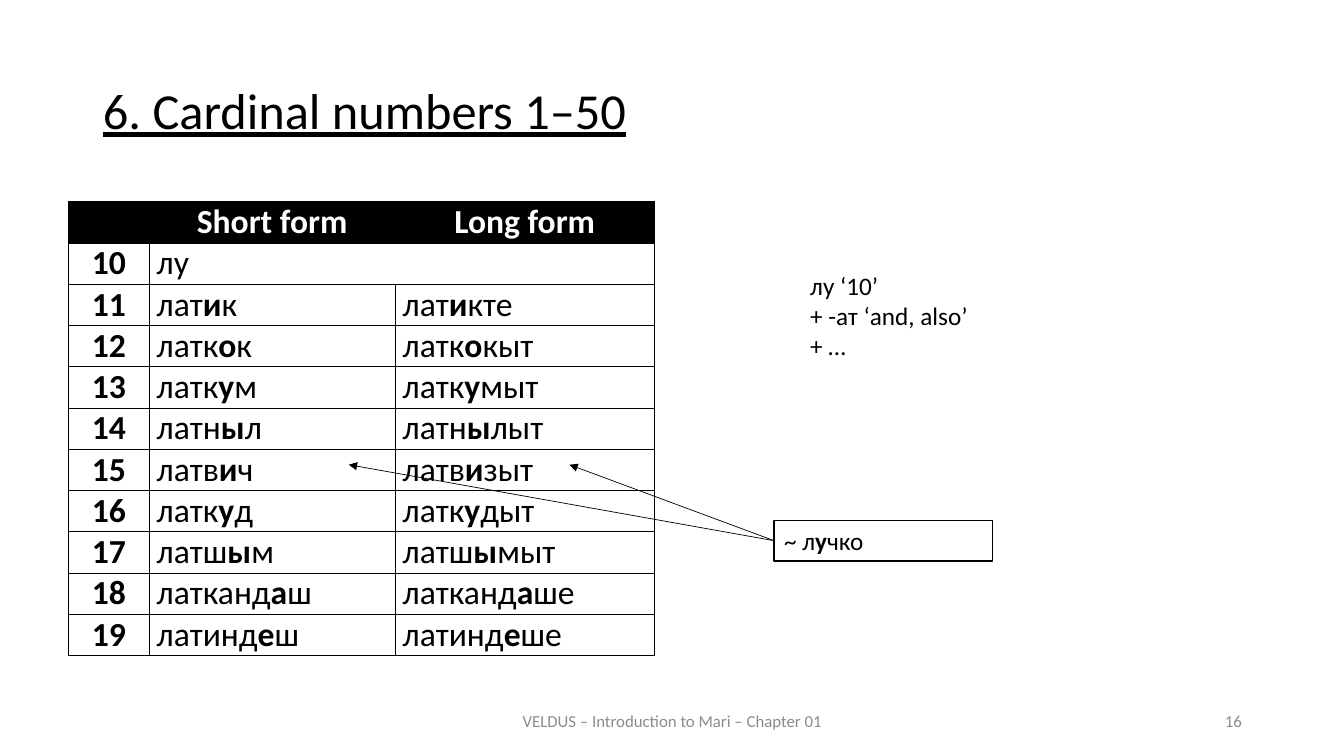
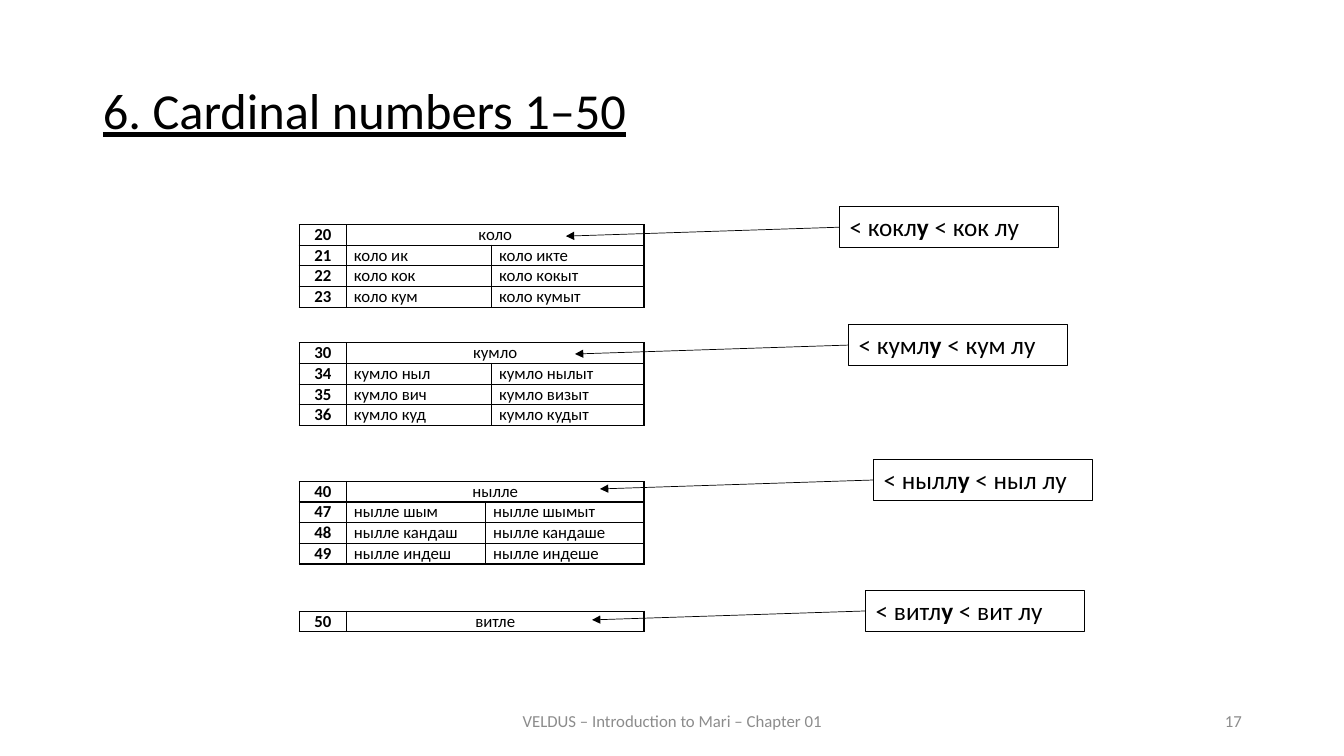
"""Build two slides on the Mari cardinal numbers from 10 to 50."""
from dataclasses import dataclass

from lxml import etree
from pptx import Presentation
from pptx.dml.color import RGBColor
from pptx.enum.shapes import MSO_CONNECTOR, MSO_SHAPE
from pptx.enum.text import MSO_ANCHOR, MSO_AUTO_SIZE, PP_ALIGN
from pptx.oxml.ns import qn
from pptx.util import Cm, Pt

LEFT, CENTER, RIGHT, JUSTIFY = PP_ALIGN.LEFT, PP_ALIGN.CENTER, PP_ALIGN.RIGHT, PP_ALIGN.JUSTIFY
TOP, MIDDLE = MSO_ANCHOR.TOP, MSO_ANCHOR.MIDDLE
NO_FIT = MSO_AUTO_SIZE.NONE
STRAIGHT = MSO_CONNECTOR.STRAIGHT
RECTANGLE = MSO_SHAPE.RECTANGLE
LEFT_SIDE = 1


@dataclass(frozen=True)
class Theme:
    font: str = "Calibri"
    ink: RGBColor = RGBColor(0x00, 0x00, 0x00)
    paper: RGBColor = RGBColor(0xFF, 0xFF, 0xFF)
    muted: RGBColor = RGBColor(0x8C, 0x8C, 0x8C)
    title_size: int = 36
    large_size: int = 24
    note_size: int = 18
    small_size: int = 12


THEME = Theme()
TITLE = "6. Cardinal numbers 1–50"
FOOTER = "VELDUS – Introduction to Mari – Chapter 01"


def write(para, text, size, color=THEME.ink, align=LEFT):
    para.alignment = align
    for index, piece in enumerate(text.split("*")):
        if piece:
            span = para.add_run()
            span.text = piece
            span.font.name = THEME.font
            span.font.size = Pt(size)
            span.font.color.rgb = color
            span.font.bold = index % 2 == 1


def add_grid(page, left, top, widths, row_height, size, border, merged_align, rows):
    frame = page.shapes.add_table(len(rows), len(widths), Cm(left), Cm(top),
                                  Cm(sum(widths)), Cm(row_height * len(rows)))
    table = frame.table
    table.first_row = table.horz_banding = False
    for column, width in zip(table.columns, widths):
        column.width = Cm(width)
    for row_index, texts in enumerate(rows):
        table.rows[row_index].height = Cm(row_height)
        header = texts[0] == ""
        for column_index in range(len(widths)):
            cell = table.cell(row_index, column_index)
            cell.margin_left = cell.margin_right = Cm(0.19)
            cell.margin_top = cell.margin_bottom = 0
            properties = cell._tc.get_or_add_tcPr()
            for side in ("a:lnL", "a:lnR", "a:lnT", "a:lnB"):
                edge = etree.SubElement(properties, qn(side), w=str(Pt(border)))
                fill = etree.SubElement(edge, qn("a:solidFill"))
                etree.SubElement(fill, qn("a:srgbClr"), val=str(THEME.ink))
            cell.fill.solid()
            cell.fill.fore_color.rgb = THEME.ink if header else THEME.paper
            if column_index >= len(texts):
                continue
            text = texts[column_index]
            if header or column_index == 0:
                text, align = f"*{text}*", CENTER
            else:
                align = merged_align if len(texts) == 2 else JUSTIFY
            write(cell.text_frame.paragraphs[0], text, size,
                  THEME.paper if header else THEME.ink, align)
        if len(texts) < len(widths):
            table.cell(row_index, 1).merge(table.cell(row_index, len(widths) - 1))


TEENS = [
    ("", "Short form", "Long form"),
    ("10", "лу"),
    ("11", "лат*и*к", "лат*и*кте"),
    ("12", "латк*о*к", "латк*о*кыт"),
    ("13", "латк*у*м", "латк*у*мыт"),
    ("14", "латн*ы*л", "латн*ы*лыт"),
    ("15", "латв*и*ч", "латв*и*зыт"),
    ("16", "латк*у*д", "латк*у*дыт"),
    ("17", "латш*ы*м", "латш*ы*мыт"),
    ("18", "латканд*а*ш", "латканд*а*ше"),
    ("19", "латинд*е*ш", "латинд*е*ше"),
]
TENS = [
    (5.66, (1.19, 3.66, 3.84), [
        ("20", "коло"),
        ("21", "коло ик", "коло икте"),
        ("22", "коло кок", "коло кокыт"),
        ("23", "коло кум", "коло кумыт")]),
    (8.64, (1.19, 3.66, 3.84), [
        ("30", "кумло"),
        ("34", "кумло ныл", "кумло нылыт"),
        ("35", "кумло вич", "кумло визыт"),
        ("36", "кумло куд", "кумло кудыт")]),
    (12.13, (1.19, 3.51, 3.99), [
        ("40", "нылле"),
        ("47", "нылле шым", "нылле шымыт"),
        ("48", "нылле кандаш", "нылле кандаше"),
        ("49", "нылле индеш", "нылле индеше")]),
    (15.4, (1.19, 7.5), [("50", "витле")]),
]
TEEN_NOTES = [(19.51, 13.11, "~ л*у*чко", [(8.79, 11.71), (14.35, 11.71)])]
TEN_NOTES = [
    (left, top, text, [(left - 6.9, top + 0.74)])
    for left, top, text in [
        (21.16, 5.21, "< кокл*у* < кок лу"),
        (21.39, 8.18, "< кумл*у* < кум лу"),
        (22.02, 11.58, "< нылл*у* < ныл лу"),
        (21.82, 14.88, "< витл*у* < вит лу"),
    ]
]

deck = Presentation()
deck.slide_width, deck.slide_height = Cm(33.87), Cm(19.05)
title_only = deck.slide_layouts[5]
pages = []

for number, notes in ((16, TEEN_NOTES), (17, TEN_NOTES)):
    page = deck.slides.add_slide(title_only)
    pages.append(page)
    title = page.shapes.title
    title.left, title.top, title.width, title.height = Cm(2.34), Cm(1.02), Cm(29.21), Cm(3.68)
    title.text_frame.auto_size = NO_FIT
    title.text_frame.vertical_anchor = MIDDLE
    heading = title.text_frame.paragraphs[0]
    heading.line_spacing = 0.9
    write(heading, TITLE, THEME.title_size)
    heading.runs[0].font.underline = True

    for left, width, text, align in ((11.23, 11.43, FOOTER, CENTER),
                                     (23.93, 7.62, str(number), RIGHT)):
        box = page.shapes.add_textbox(Cm(left), Cm(17.65), Cm(width), Cm(1.02))
        box.text_frame.word_wrap = True
        box.text_frame.vertical_anchor = MIDDLE
        write(box.text_frame.paragraphs[0], text, THEME.small_size, THEME.muted, align)

    if number == 16:
        add_grid(page, 1.73, 5.08, (2.03, 6.2, 6.53), 1.04,
                 THEME.large_size, 0.5, JUSTIFY, TEENS)
    else:
        for top, widths, rows in TENS:
            add_grid(page, 7.54, top, widths, 0.52, THEME.small_size, 1, CENTER, rows)

    for left, top, text, targets in notes:
        box = page.shapes.add_shape(RECTANGLE, Cm(left), Cm(top), Cm(5.51), Cm(1.03))
        box.shadow.inherit = False
        box.fill.solid()
        box.fill.fore_color.rgb = THEME.paper
        box.line.color.rgb = THEME.ink
        box.line.width = Pt(1)
        box.text_frame.word_wrap = True
        box.text_frame.vertical_anchor = TOP
        write(box.text_frame.paragraphs[0], text, THEME.note_size)
        for target_left, target_top in targets:
            arrow = page.shapes.add_connector(STRAIGHT, Cm(left), Cm(top),
                                              Cm(target_left), Cm(target_top))
            arrow.begin_connect(box, LEFT_SIDE)
            arrow.line.color.rgb = THEME.ink
            arrow.line.width = Pt(0.5)
            etree.SubElement(arrow.line._get_or_add_ln(), qn("a:tailEnd"), type="triangle")
            etree.SubElement(arrow._element.spPr, qn("a:effectLst"))

origin = pages[0].shapes.add_textbox(Cm(20.17), Cm(6.68), Cm(5.51), Cm(2.56)).text_frame
origin.word_wrap = True
for index, text in enumerate(("лу ‘10’", "+ -ат ‘and, also’", "+ …")):
    para = origin.add_paragraph() if index else origin.paragraphs[0]
    write(para, text, THEME.note_size)

deck.save("out.pptx")
